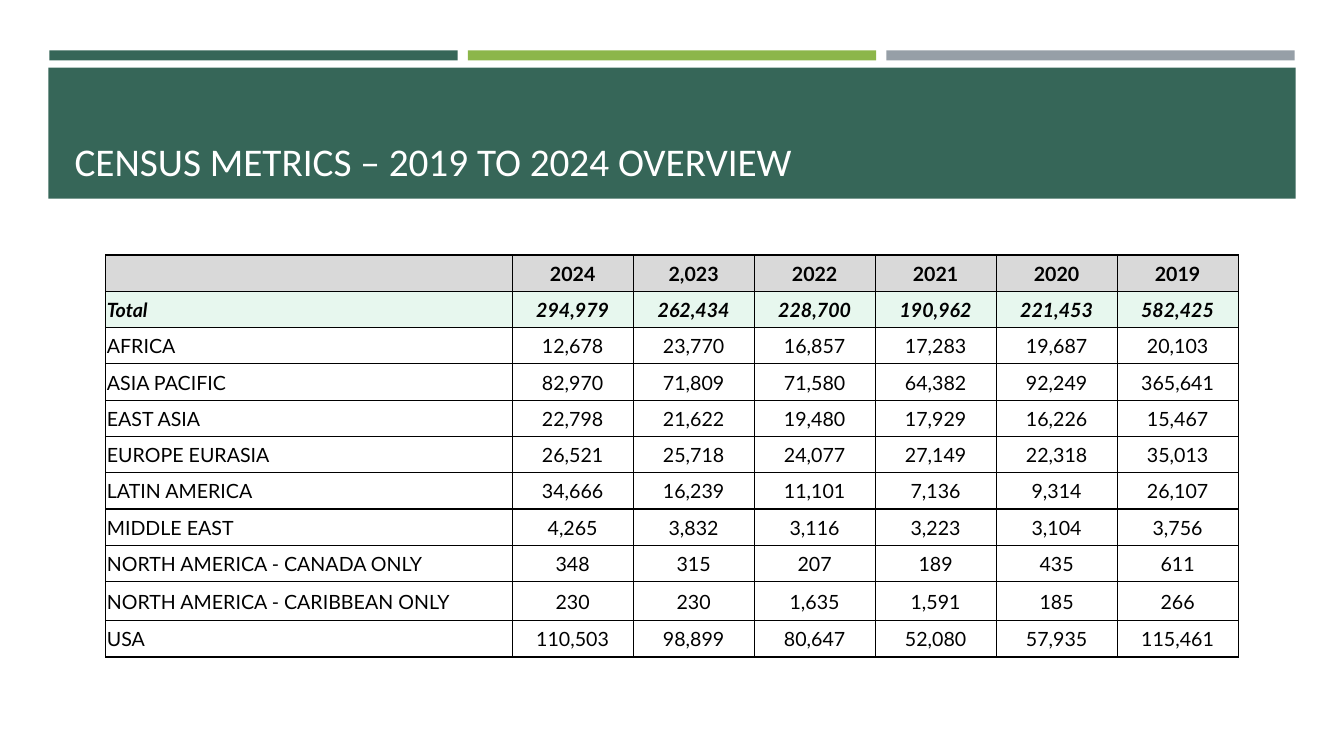
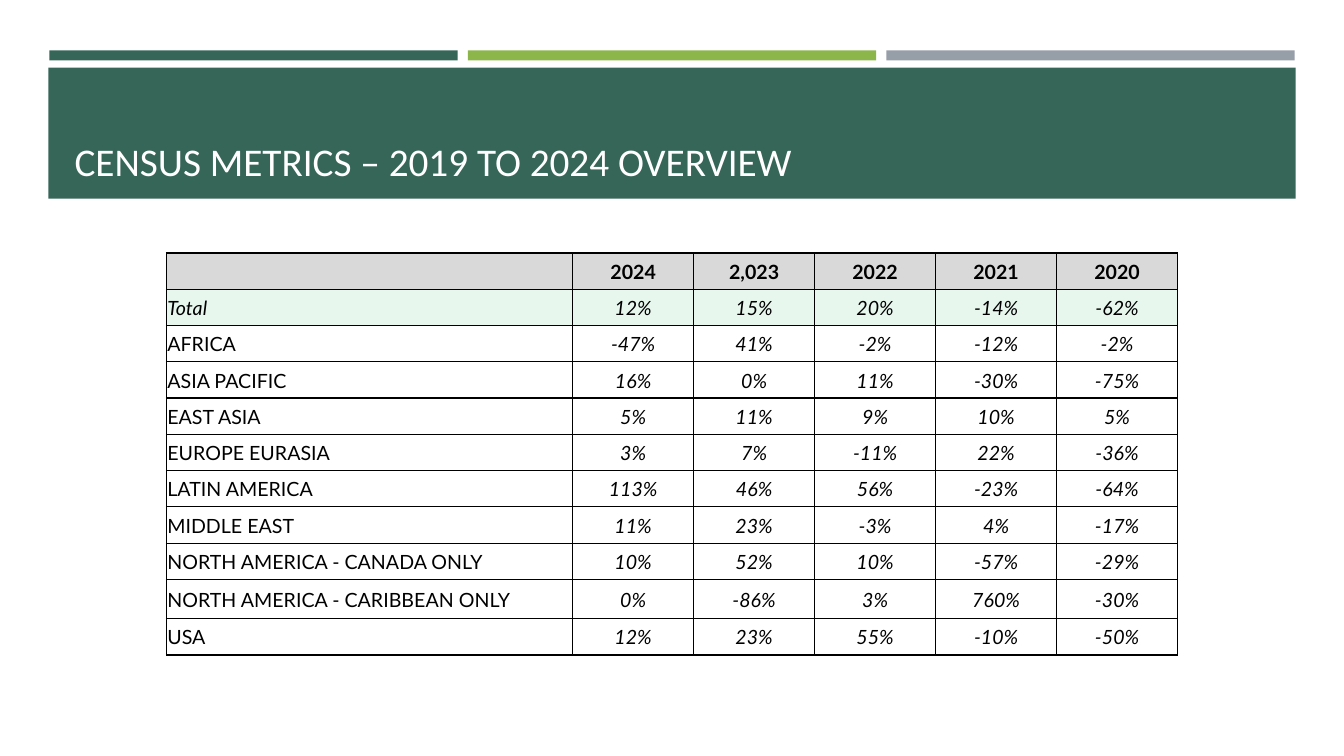
from lxml import etree
from pptx import Presentation
from pptx.dml.color import RGBColor
from pptx.enum.shapes import MSO_SHAPE
from pptx.enum.text import MSO_ANCHOR, MSO_AUTO_SIZE, PP_ALIGN
from pptx.oxml.ns import qn
from pptx.util import Inches, Pt

RECT = MSO_SHAPE.RECTANGLE
LEFT, CENTER = PP_ALIGN.LEFT, PP_ALIGN.CENTER
MIDDLE, BOTTOM = MSO_ANCHOR.MIDDLE, MSO_ANCHOR.BOTTOM
NO_FIT = MSO_AUTO_SIZE.NONE
TITLE_ONLY = 5

TITLE = "CENSUS METRICS – 2019 TO 2024 OVERVIEW"
AREAS = [
    "Total", "AFRICA", "ASIA PACIFIC", "EAST ASIA", "EUROPE EURASIA",
    "LATIN AMERICA", "MIDDLE EAST", "NORTH AMERICA - CANADA ONLY",
    "NORTH AMERICA - CARIBBEAN ONLY", "USA",
]
YEARS = ["2024", "2,023", "2022", "2021", "2020", "2019"]
COUNTS = [
    "294,979 262,434 228,700 190,962 221,453 582,425",
    "12,678 23,770 16,857 17,283 19,687 20,103",
    "82,970 71,809 71,580 64,382 92,249 365,641",
    "22,798 21,622 19,480 17,929 16,226 15,467",
    "26,521 25,718 24,077 27,149 22,318 35,013",
    "34,666 16,239 11,101 7,136 9,314 26,107",
    "4,265 3,832 3,116 3,223 3,104 3,756",
    "348 315 207 189 435 611",
    "230 230 1,635 1,591 185 266",
    "110,503 98,899 80,647 52,080 57,935 115,461",
]
CHANGES = [
    "12% 15% 20% -14% -62%",
    "-47% 41% -2% -12% -2%",
    "16% 0% 11% -30% -75%",
    "5% 11% 9% 10% 5%",
    "3% 7% -11% 22% -36%",
    "113% 46% 56% -23% -64%",
    "11% 23% -3% 4% -17%",
    "10% 52% 10% -57% -29%",
    "0% -86% 3% 760% -30%",
    "12% 23% 55% -10% -50%",
]


def color(code):
    return RGBColor.from_string(code)


class Deck:
    GREEN, LIME, GRAY = "366658", "8CB64A", "969FA7"
    HEAD, TOTAL = "D9D9D9", "E7F7EE"
    BLACK, WHITE = "000000", "FFFFFF"
    HEAD_FONT, BODY_FONT = "Calibri", "Lato"

    def __init__(self):
        self.prs = Presentation()
        self.prs.slide_width = Inches(13.33)
        self.prs.slide_height = Inches(7.5)
        self.slide = None

    def add_slide(self, title):
        layout = self.prs.slide_layouts[TITLE_ONLY]
        self.slide = self.prs.slides.add_slide(layout)
        for i, fill in enumerate((self.GREEN, self.LIME, self.GRAY)):
            self.band(0.49 + i * 4.15, 0.5, 4.05, 0.1, fill)
        self.band(0.48, 0.67, 12.37, 1.3, self.GREEN)
        self.title(title)

    def band(self, left, top, width, height, fill):
        shape = self.slide.shapes.add_shape(
            RECT, Inches(left), Inches(top), Inches(width), Inches(height))
        shape.shadow.inherit = False
        shape.fill.solid()
        shape.fill.fore_color.rgb = color(fill)
        shape.line.fill.background()

    def title(self, text):
        """Fill the title placeholder and bring it in front of the bands."""
        shape = self.slide.shapes.title
        shape.left, shape.top = Inches(0.64), Inches(0.77)
        shape.width, shape.height = Inches(12.06), Inches(1.11)
        frame = shape.text_frame
        frame.text = text
        frame.auto_size = NO_FIT
        frame.vertical_anchor = BOTTOM
        para = frame.paragraphs[0]
        para.alignment = LEFT
        self.style(para, self.HEAD_FONT, 28, self.WHITE)
        shape.element.getparent().append(shape.element)

    def style(self, para, name, size, ink, bold=False, italic=False):
        for run in para.runs:
            font = run.font
            font.name, font.size = name, Pt(size)
            font.color.rgb = color(ink)
            font.bold, font.italic = bold, italic

    def table(self, left, top, values, bold_total=False, italic=False):
        """Draw one row per area; the number of values sets the years."""
        body = [[area, *line.split()] for area, line in zip(AREAS, values)]
        count = len(body[0])
        rows = [["", *YEARS[:count - 1]], *body]
        widths = [4.03] + [1.2] * (count - 1)
        heights = [0.39 if "CARIBBEAN" in row[0] else 0.36 for row in rows]
        grid = self.slide.shapes.add_table(
            len(rows), count, Inches(left), Inches(top),
            Inches(sum(widths)), Inches(sum(heights))).table
        grid.first_row = grid.horz_banding = False
        for col, width in zip(grid.columns, widths):
            col.width = Inches(width)
        for row, height in zip(grid.rows, heights):
            row.height = Inches(height)
        fills = {0: self.HEAD, 1: self.TOTAL}
        for r, row in enumerate(rows):
            for c, text in enumerate(row):
                self.cell(
                    grid.cell(r, c), text, fills.get(r),
                    CENTER if c else LEFT,
                    bold=r == 0 or (r == 1 and bold_total),
                    italic=r == 1 or (r > 1 and c > 0 and italic))

    def cell(self, cell, text, fill, align, bold, italic):
        cell.margin_left = cell.margin_right = cell.margin_top = Inches(0.01)
        cell.margin_bottom = 0
        cell.vertical_anchor = MIDDLE
        self.border(cell)
        if fill:
            cell.fill.solid()
            cell.fill.fore_color.rgb = color(fill)
        else:
            cell.fill.background()
        cell.text_frame.text = text
        para = cell.text_frame.paragraphs[0]
        para.alignment = align
        self.style(para, self.BODY_FONT, 14, self.BLACK, bold, italic)

    def border(self, cell):
        props = cell._tc.get_or_add_tcPr()
        for side in ("a:lnL", "a:lnR", "a:lnT", "a:lnB"):
            line = etree.SubElement(props, qn(side), w=str(Pt(1)))
            fill = etree.SubElement(line, qn("a:solidFill"))
            etree.SubElement(fill, qn("a:srgbClr"), val=self.BLACK)


def main():
    deck = Deck()
    deck.add_slide(TITLE)
    deck.table(1.05, 2.53, COUNTS, bold_total=True)
    deck.add_slide(TITLE)
    deck.table(1.65, 2.51, CHANGES, italic=True)
    deck.prs.save("out.pptx")


if __name__ == "__main__":
    main()
